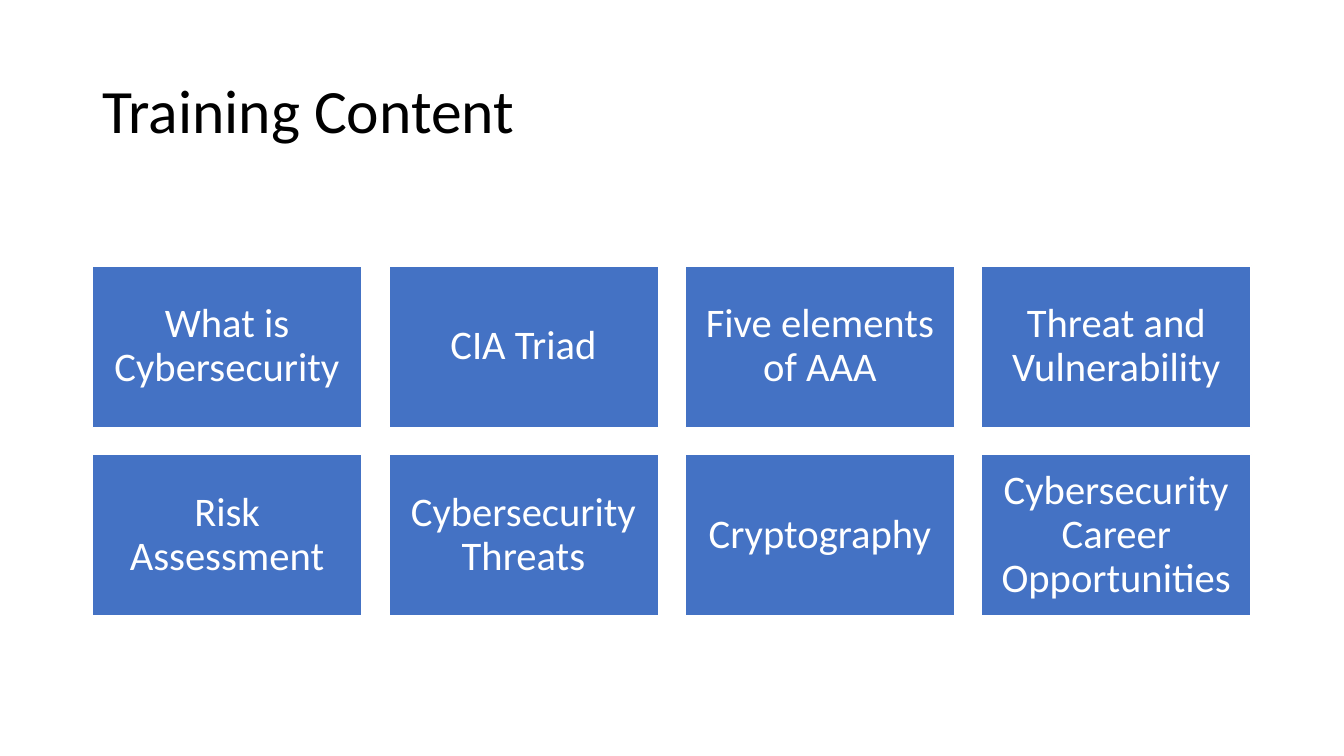
"""Build the Training Content slide: a title above a grid of topic tiles."""
from dataclasses import dataclass

from pptx import Presentation
from pptx.dml.color import RGBColor
from pptx.enum.shapes import MSO_SHAPE
from pptx.enum.text import MSO_ANCHOR, PP_ALIGN
from pptx.shapes.autoshape import Shape
from pptx.slide import Slide
from pptx.util import Cm, Pt

RECTANGLE = MSO_SHAPE.RECTANGLE
MIDDLE = MSO_ANCHOR.MIDDLE
LEFT = PP_ALIGN.LEFT
CENTER = PP_ALIGN.CENTER

BLACK = RGBColor(0x00, 0x00, 0x00)
WHITE = RGBColor(0xFF, 0xFF, 0xFF)
BLUE = RGBColor(0x44, 0x72, 0xC4)

FONT = "Calibri"
MARGIN = 2.33
GRID_TOP = 6.7
COLUMNS = 4
TILE_WIDTH, TILE_HEIGHT = 6.79, 4.07
GAP = 0.68
TILE_INSET = Cm(0.3)

TOPICS = (
    "What is Cybersecurity",
    "CIA Triad",
    "Five elements of AAA",
    "Threat and Vulnerability",
    "Risk Assessment",
    "Cybersecurity Threats",
    "Cryptography",
    "Cybersecurity Career Opportunities",
)


@dataclass(frozen=True)
class Tile:
    """A topic and its place in the grid, in centimetres."""
    topic: str
    left: float
    top: float


def write_text(box: Shape, text: str, size: int, color: RGBColor, align: PP_ALIGN) -> None:
    """Write one vertically centred paragraph into a box."""
    frame = box.text_frame
    frame.word_wrap = True
    frame.vertical_anchor = MIDDLE
    para = frame.paragraphs[0]
    para.alignment = align
    para.line_spacing = 0.9
    span = para.add_run()
    span.text = text
    span.font.name = FONT
    span.font.size = Pt(size)
    span.font.color.rgb = color


def add_title(page: Slide, text: str) -> None:
    """Add the slide title."""
    box = page.shapes.add_textbox(Cm(MARGIN), Cm(1.01), Cm(29.21), Cm(3.68))
    write_text(box, text, 44, BLACK, LEFT)


def add_tile(page: Slide, tile: Tile) -> None:
    """Add one blue topic tile."""
    box = page.shapes.add_shape(
        RECTANGLE, Cm(tile.left), Cm(tile.top), Cm(TILE_WIDTH), Cm(TILE_HEIGHT)
    )
    box.shadow.inherit = False
    box.fill.solid()
    box.fill.fore_color.rgb = BLUE
    box.line.color.rgb = WHITE
    box.line.width = Pt(1)
    frame = box.text_frame
    frame.margin_left = frame.margin_right = TILE_INSET
    frame.margin_top = frame.margin_bottom = TILE_INSET
    write_text(box, tile.topic, 29, WHITE, CENTER)


def place_tiles() -> list[Tile]:
    """Lay the topics out row by row."""
    tiles = []
    for index, topic in enumerate(TOPICS):
        row, column = divmod(index, COLUMNS)
        left = MARGIN + column * (TILE_WIDTH + GAP)
        top = GRID_TOP + row * (TILE_HEIGHT + GAP)
        tiles.append(Tile(topic, left, top))
    return tiles


def main() -> None:
    """Build and save the deck."""
    deck = Presentation()
    deck.slide_width = Cm(33.87)
    deck.slide_height = Cm(19.05)
    page = deck.slides.add_slide(deck.slide_layouts[6])
    add_title(page, "Training Content")
    for tile in place_tiles():
        add_tile(page, tile)
    deck.save("out.pptx")


if __name__ == "__main__":
    main()
